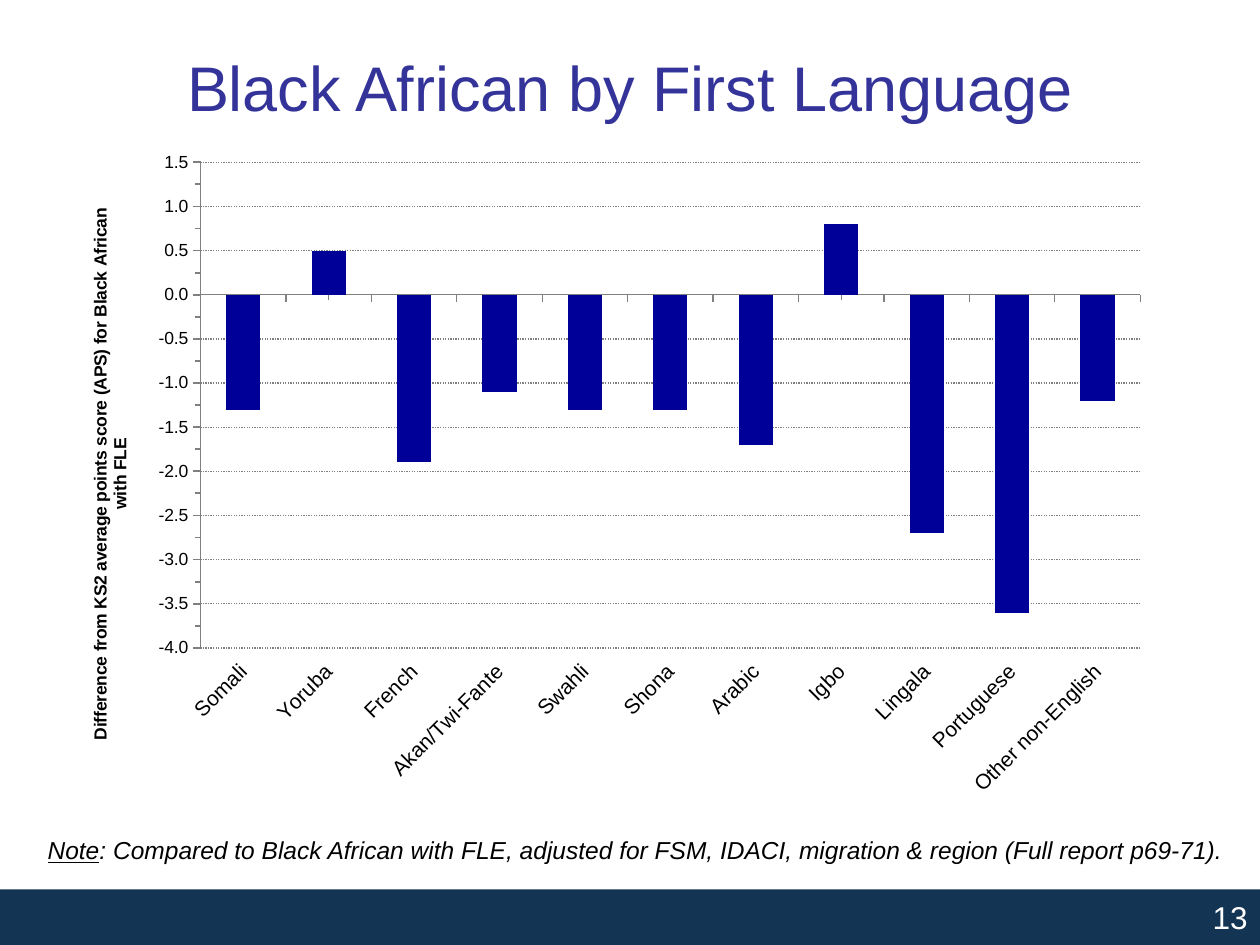
from lxml.etree import SubElement
from pptx import Presentation
from pptx.chart.data import CategoryChartData
from pptx.dml.color import RGBColor
from pptx.enum.chart import XL_CHART_TYPE, XL_TICK_LABEL_POSITION, XL_TICK_MARK
from pptx.enum.dml import MSO_LINE
from pptx.enum.shapes import MSO_SHAPE
from pptx.enum.text import MSO_ANCHOR, PP_ALIGN
from pptx.oxml.ns import qn
from pptx.util import Cm, Pt

BLACK = RGBColor(0x00, 0x00, 0x00)
WHITE = RGBColor(0xFF, 0xFF, 0xFF)
GREY = RGBColor(0x80, 0x80, 0x80)
TITLE_BLUE = RGBColor(0x33, 0x33, 0x99)
BAR_BLUE = RGBColor(0x00, 0x00, 0x99)
FOOTER_NAVY = RGBColor(0x13, 0x34, 0x52)

SCORE_GAPS = {
    "Somali": -1.3,
    "Yoruba": 0.5,
    "French": -1.9,
    "Akan/Twi-Fante": -1.1,
    "Swahli": -1.3,
    "Shona": -1.3,
    "Arabic": -1.7,
    "Igbo": 0.8,
    "Lingala": -2.7,
    "Portuguese": -3.6,
    "Other non-English": -1.2,
}
SCORE_TITLE = "Difference from KS2 average points score (APS) for Black African with FLE"
PLOT_LAYOUT = {
    "layoutTarget": "inner", "xMode": "edge", "yMode": "edge",
    "x": 0.16, "y": 0.04, "w": 0.81, "h": 0.71,
}
TICKS = {"major_tick_mark": XL_TICK_MARK.OUTSIDE, "minor_tick_mark": XL_TICK_MARK.OUTSIDE}
SCORE_SCALE = {
    **TICKS, "minimum_scale": -4, "maximum_scale": 1.5, "major_unit": 0.5,
    "minor_unit": 0.25, "has_major_gridlines": True, "has_title": True,
}


def apply_format(target, values):
    """Set each named attribute of the target."""
    for name, value in values.items():
        setattr(target, name, value)


def format_font(font, size, color, **values):
    """Give a font its Arial face, size, colour and further values."""
    apply_format(font, {"name": "Arial", "size": Pt(size), **values})
    font.color.rgb = color


def format_line(line, width=0.75):
    """Give a chart line its grey colour and width."""
    line.color.rgb = GREY
    line.width = Pt(width)


def place_title(slide, text):
    """Fill, move and format the title placeholder."""
    title = slide.shapes.title
    apply_format(title, {"left": Cm(1.27), "top": Cm(0.76),
                         "width": Cm(22.86), "height": Cm(1.96)})
    title.text_frame.text = text
    title.text_frame.vertical_anchor = MSO_ANCHOR.MIDDLE
    heading = title.text_frame.paragraphs[0]
    heading.alignment = PP_ALIGN.CENTER
    format_font(heading.runs[0].font, 36, TITLE_BLUE)


def add_footer(slide, number):
    """Add the footer band with the slide number."""
    footer = slide.shapes.add_shape(
        MSO_SHAPE.RECTANGLE, Cm(0), Cm(17.93), Cm(25.4), Cm(1.12))
    footer.shadow.inherit = False
    footer.fill.solid()
    footer.fill.fore_color.rgb = FOOTER_NAVY
    footer.line.fill.background()
    footer.text_frame.text = number
    page = footer.text_frame.paragraphs[0]
    page.alignment = PP_ALIGN.RIGHT
    format_font(page.runs[0].font, 18, WHITE)


def add_note(slide, label, text):
    """Add the italic note with its underlined label."""
    note = slide.shapes.add_textbox(Cm(0.71), Cm(16.71), Cm(24.69), Cm(0.86))
    note.text_frame.word_wrap = True
    sentence = note.text_frame.paragraphs[0]
    for part, underlined in ((label, True), (text, False)):
        run = sentence.add_run()
        run.text = part
        format_font(run.font, 14, BLACK, italic=True, underline=underlined)


def set_plot_layout(chart):
    """Fix the inner plot area inside the chart."""
    plot_area = chart.plots[0]._element.getparent()
    for automatic in plot_area.findall(qn("c:layout")):
        plot_area.remove(automatic)
    layout = SubElement(plot_area, qn("c:layout"))
    plot_area.insert(0, layout)
    manual = SubElement(layout, qn("c:manualLayout"))
    for name, value in PLOT_LAYOUT.items():
        SubElement(manual, qn(f"c:{name}")).set("val", str(value))


def format_language_axis(axis):
    """Put slanted language names below the plot."""
    apply_format(axis, {**TICKS, "has_major_gridlines": False})
    format_line(axis.format.line)
    axis.tick_label_position = XL_TICK_LABEL_POSITION.LOW
    format_font(axis.tick_labels.font, 12, BLACK)
    body = axis._element.find(qn("c:txPr")).find(qn("a:bodyPr"))
    body.set("rot", "-2700000")
    body.set("vert", "horz")


def format_score_axis(axis):
    """Set the score scale, dotted gridlines and axis title."""
    apply_format(axis, SCORE_SCALE)
    format_line(axis.format.line, 1)
    gridline = axis.major_gridlines.format.line
    format_line(gridline)
    gridline.dash_style = MSO_LINE.ROUND_DOT
    apply_format(axis.tick_labels, {"number_format": "###0.0",
                                    "number_format_is_linked": False})
    format_font(axis.tick_labels.font, 10, BLACK)
    caption = axis.axis_title.text_frame
    caption.text = SCORE_TITLE
    format_font(caption.paragraphs[0].runs[0].font, 10, BLACK, bold=True)


def add_language_chart(slide):
    """Add the column chart of score gaps by language."""
    gaps = CategoryChartData()
    gaps.categories = list(SCORE_GAPS)
    gaps.add_series("Series 1", list(SCORE_GAPS.values()))
    chart = slide.shapes.add_chart(
        XL_CHART_TYPE.COLUMN_CLUSTERED,
        Cm(0.3), Cm(2.72), Cm(23.39), Cm(13.79), gaps).chart
    apply_format(chart, {"has_legend": False, "has_title": False})
    format_font(chart.font, 10, BLACK)
    columns = chart.plots[0]
    apply_format(columns, {"gap_width": 150, "vary_by_categories": False})
    bars = columns.series[0]
    bars.invert_if_negative = False
    bars.format.fill.solid()
    bars.format.fill.fore_color.rgb = BAR_BLUE
    format_language_axis(chart.category_axis)
    format_score_axis(chart.value_axis)
    set_plot_layout(chart)


def main():
    """Build the slide and save it."""
    deck = Presentation()
    apply_format(deck, {"slide_width": Cm(25.4), "slide_height": Cm(19.05)})
    slide = deck.slides.add_slide(deck.slide_layouts.get_by_name("Title Only"))
    add_footer(slide, "13")
    place_title(slide, "Black African by First Language")
    add_note(slide, "Note", ": Compared to Black African with FLE, adjusted for FSM, "
             "IDACI, migration & region (Full report p69-71).")
    add_language_chart(slide)
    deck.save("out.pptx")


if __name__ == "__main__":
    main()
